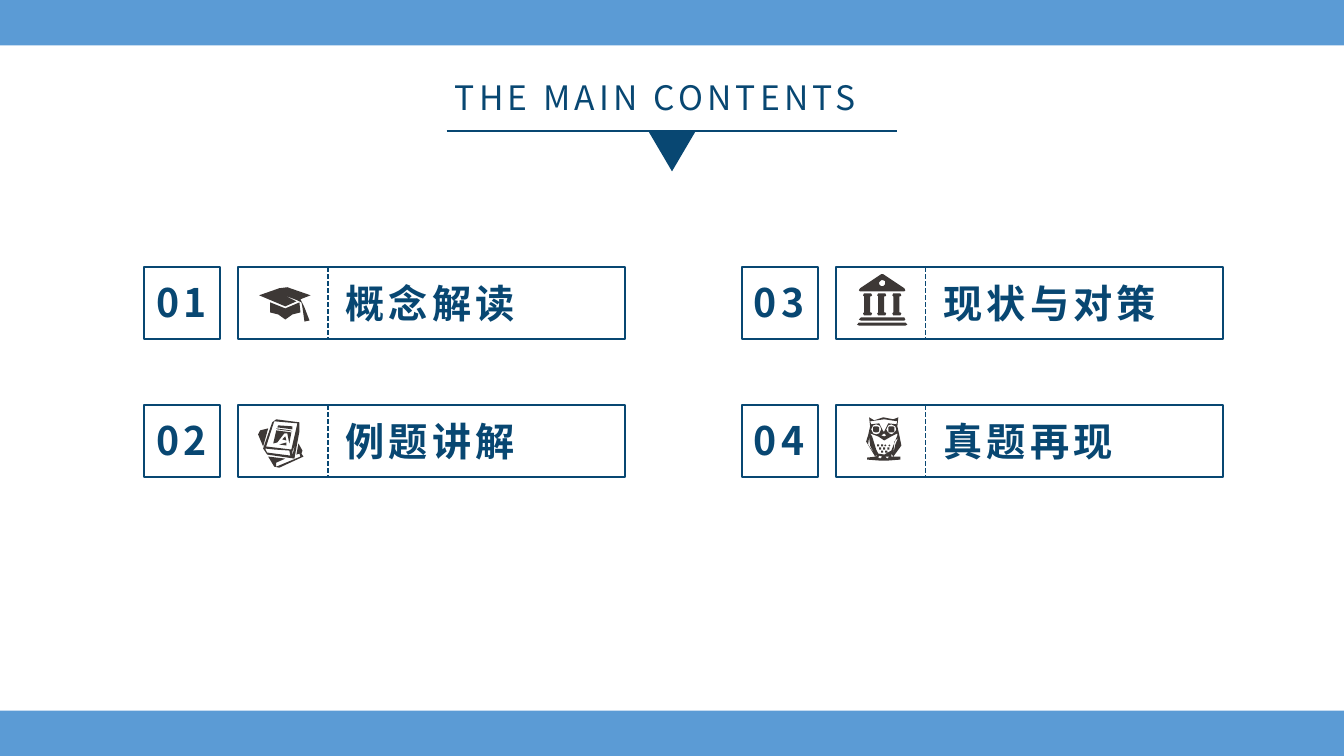
from math import cos, pi, sin

from lxml import etree
from pptx import Presentation
from pptx.dml.color import RGBColor
from pptx.enum.dml import MSO_LINE
from pptx.enum.shapes import MSO_CONNECTOR, MSO_SHAPE
from pptx.enum.text import MSO_ANCHOR, MSO_AUTO_SIZE, PP_ALIGN
from pptx.oxml.ns import qn
from pptx.util import Pt

RECTANGLE, TRIANGLE = MSO_SHAPE.RECTANGLE, MSO_SHAPE.ISOSCELES_TRIANGLE
STRAIGHT = MSO_CONNECTOR.STRAIGHT
DASH = MSO_LINE.SQUARE_DOT
MIDDLE, LEFT, NO_FIT = MSO_ANCHOR.MIDDLE, PP_ALIGN.LEFT, MSO_AUTO_SIZE.NONE

BLUE = RGBColor(0x5B, 0x9B, 0xD5)
NAVY = RGBColor(0x08, 0x47, 0x72)
CHARCOAL = RGBColor(0x3D, 0x38, 0x36)
FONT = "Noto Sans CJK SC"
PX = 9144  # 100 px to the inch
SLIDE_W, SLIDE_H, BAR_H = 1333, 750, 45


def circle(x, y, radius, steps=12):
    return [(x + radius * cos(2 * pi * i / steps), y + radius * sin(2 * pi * i / steps))
            for i in range(steps)]


# Icons are lists of outlines in px; an outline inside another cuts a hole.
CAP = [
    [(20, 2), (28, 1), (51, 9), (41, 13), (45, 21), (50, 34), (45, 35), (43, 21),
     (42, 16), (38, 14), (25, 9), (37, 15), (26, 20), (0, 9)],
    [(11, 16), (11, 26), (19, 28), (26, 33), (33, 28), (41, 26), (40, 16), (26, 22)],
]
BOOKS = [
    [(15, 4), (19, 1), (42, 4), (42, 13), (37, 40), (10, 36), (6, 30)],
    [(17, 3), (9, 28), (34, 31), (40, 5)],
    [(38, 25), (35, 33), (35, 37)],
    [(8, 30), (10, 34), (33, 37), (32, 32), (17, 31)],
    [(21, 7), (20, 9), (35, 11), (35, 8)],
    [(19, 10), (20, 11), (35, 13), (33, 12)],
    [(1, 16), (6, 28), (11, 10), (3, 12)],
    [(16, 25), (20, 24), (27, 15), (30, 15), (32, 25), (34, 14), (19, 12)],
    [(28, 18), (25, 21), (29, 22)],
    [(22, 26), (29, 27), (29, 24)],
    [(41, 25), (39, 36), (42, 35), (43, 38), (19, 48), (19, 44), (28, 40), (11, 38),
     (17, 48), (22, 49), (46, 38), (44, 35), (45, 32)],
]
COLUMN = [(7, 38), (6, 39), (7, 41), (14, 41), (15, 39), (14, 38), (13, 38), (13, 22),
          (14, 22), (15, 21), (14, 19), (7, 19), (6, 21), (7, 22), (7, 38)]
MUSEUM = [
    [(0, 50), (2, 48), (48, 48), (50, 50), (48, 51), (2, 51)],
    [(2, 45), (4, 43), (47, 43), (48, 45), (47, 46), (4, 46)],
    [(2, 16), (3, 14), (24, 0), (26, 0), (47, 14), (48, 16), (47, 17), (3, 17)],
    circle(25, 9, 3),
    *[[(x + shift, y) for x, y in COLUMN] for shift in (0, 14, 29)],
]
OWL_EYES = [(11, 12), (26, 12)]
OWL_SPOTS = [(13, 28), (17, 28), (20, 28), (24, 28), (15, 31), (19, 31), (23, 31),
             (17, 34), (21, 34)]
OWL = [
    [(4, 0), (9, 3), (18, 0), (28, 2), (33, 0), (32, 9), (34, 18), (36, 28), (28, 39),
     (26, 36), (26, 39), (35, 39), (35, 42), (22, 43), (15, 43), (2, 42), (2, 40),
     (11, 39), (12, 36), (10, 39), (1, 24), (3, 18), (5, 9)],
    [(5, 4), (6, 7), (14, 6), (18, 14), (19, 14), (23, 6), (31, 7), (32, 4), (19, 2)],
    [(16, 18), (19, 19), (21, 18), (19, 16)],
    [(26, 19), (19, 23), (13, 19), (5, 16), (7, 19), (11, 32), (13, 36), (19, 37),
     (26, 33), (32, 18), (32, 16)],
    [(3, 27), (9, 36), (5, 28), (4, 20)],
    [(29, 24), (28, 36), (30, 27), (33, 20)],
    [(14, 38), (13, 40), (15, 41), (17, 39)],
    [(20, 39), (22, 41), (24, 39)],
    *[circle(x, y, radius) for x, y in OWL_EYES for radius in (5, 3)],
    *[circle(x, y, 1) for x, y in OWL_SPOTS],
]

TITLE = "THE MAIN CONTENTS"
# number, heading, icon, icon offset from the chapter's corner
CHAPTERS = [
    ("01", "概念解读", CAP, (114, 19)),
    ("02", "例题讲解", BOOKS, (112, 13)),
    ("03", "现状与对策", MUSEUM, (114, 7)),
    ("04", "真题再现", OWL, (122, 12)),
]
ROWS = 2
CHAPTER_X, CHAPTER_Y, PITCH_X, PITCH_Y = 143, 265, 593, 137
BOX_H = 71

prs = Presentation()
prs.slide_width, prs.slide_height = SLIDE_W * PX, SLIDE_H * PX
slide = prs.slides.add_slide(prs.slide_layouts[5])
shapes = slide.shapes


def emu(*lengths):
    return [length * PX for length in lengths]


def paint(shape, fill=None, line_width=None):
    shape.shadow.inherit = False
    if fill is None:
        shape.fill.background()
    else:
        shape.fill.solid()
        shape.fill.fore_color.rgb = fill
    if line_width is None:
        shape.line.fill.background()
    else:
        shape.line.color.rgb = NAVY
        shape.line.width = Pt(line_width)


def add_preset(kind, box, **look):
    shape = shapes.add_shape(kind, *emu(*box))
    paint(shape, **look)
    return shape


def add_line(ends, width, dash=None):
    line = shapes.add_connector(STRAIGHT, *emu(*ends))
    line.line.color.rgb = NAVY
    line.line.width = Pt(width)
    if dash:
        line.line.dash_style = dash
    etree.SubElement(line._element.spPr, qn("a:effectLst"))


def write(holder, text, size, bold):
    """Put one line of spaced text in a text box or placeholder."""
    frame = holder.text_frame
    frame.text = text
    for name, value in dict(word_wrap=True, auto_size=NO_FIT, vertical_anchor=MIDDLE).items():
        setattr(frame, name, value)
    paragraph = frame.paragraphs[0]
    paragraph.alignment = LEFT
    font = paragraph.runs[0].font
    for name, value in dict(name=FONT, size=Pt(size), bold=bold).items():
        setattr(font, name, value)
    font.color.rgb = NAVY
    run_format = paragraph.runs[0]._r.get_or_add_rPr()
    run_format.set("spc", "300")
    etree.SubElement(run_format, qn("a:ea"), typeface=FONT)


def add_icon(outlines, x, y):
    first, *others = outlines
    builder = shapes.build_freeform(*first[0], scale=PX)
    builder.add_line_segments(first[1:], close=True)
    for outline in others:
        builder.move_to(*outline[0])
        builder.add_line_segments(outline[1:], close=True)
    paint(builder.convert_to_shape(*emu(x, y)), fill=CHARCOAL)


for bar_y in (0, SLIDE_H - BAR_H):
    add_preset(RECTANGLE, (0, bar_y, SLIDE_W, BAR_H), fill=BLUE)

title = shapes.title
title.left, title.top, title.width, title.height = emu(441, 71, 452, 50)
write(title, TITLE, 24, False)
add_line((443, 130, 890, 130), 1.5)
add_preset(TRIANGLE, (643, 130, 47, 40), fill=NAVY).rotation = 180

for index, (number, heading, icon, (icon_x, icon_y)) in enumerate(CHAPTERS):
    column, row = divmod(index, ROWS)
    x, y = CHAPTER_X + column * PITCH_X, CHAPTER_Y + row * PITCH_Y
    for box_x, box_w in ((x, 75), (x + 93, 384)):
        add_preset(RECTANGLE, (box_x, y, box_w, BOX_H), line_width=1.25)
    for text, text_x, text_y, text_w in ((number, x + 2, y + 6, 97),
                                         (heading, x + 190, y + 7, 310)):
        write(shapes.add_textbox(*emu(text_x, text_y, text_w, 57)), text, 28, True)
    add_line((x + 182, y, x + 182, y + BOX_H), 1.25, DASH)
    add_icon(icon, x + icon_x, y + icon_y)

prs.save("out.pptx")
